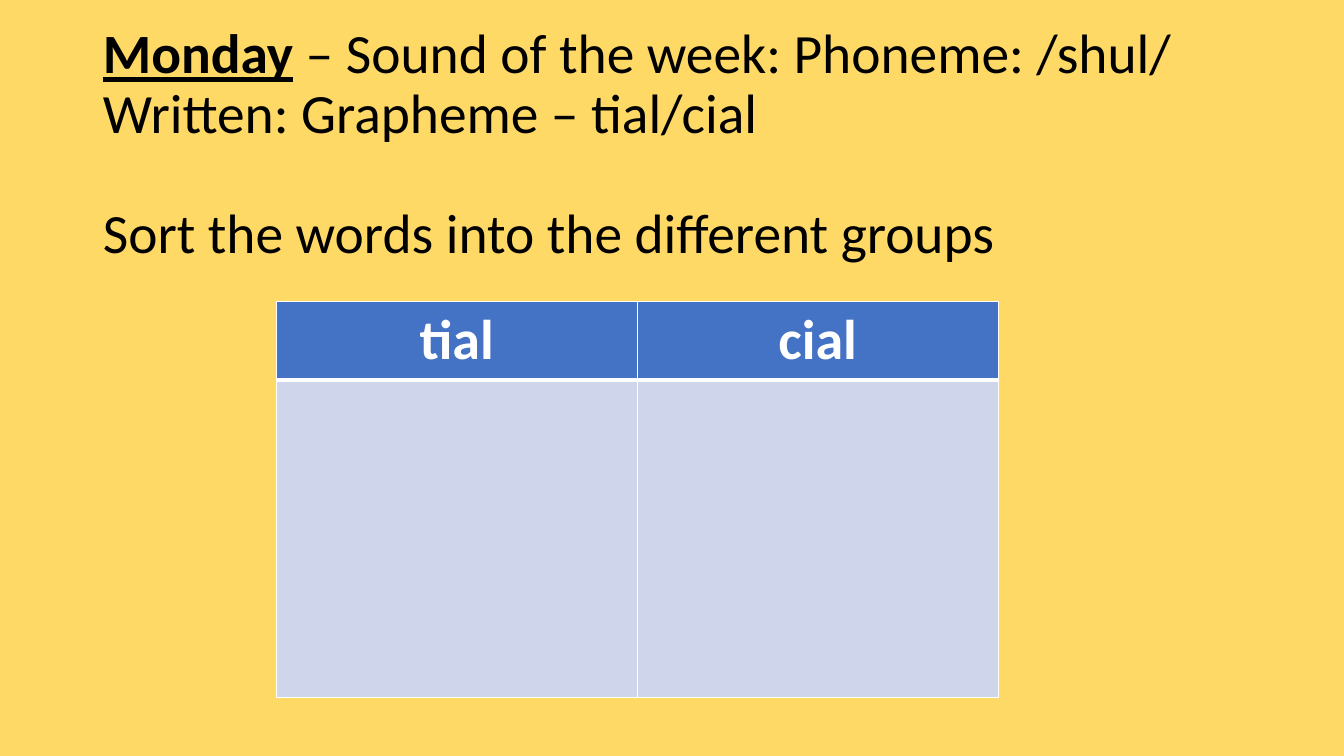
"""Builds a phonics slide with a heading and a two-column sorting table."""
from lxml import etree
from pptx import Presentation
from pptx.dml.color import RGBColor
from pptx.enum.text import MSO_ANCHOR, MSO_AUTO_SIZE, PP_ALIGN
from pptx.oxml.ns import qn
from pptx.util import Inches, Pt

MIDDLE = MSO_ANCHOR.MIDDLE
NO_FIT = MSO_AUTO_SIZE.NONE
LEFT, CENTER = PP_ALIGN.LEFT, PP_ALIGN.CENTER
YELLOW = RGBColor(0xFF, 0xD9, 0x66)
BLUE = RGBColor(0x44, 0x72, 0xC4)
PALE_BLUE = RGBColor(0xCF, 0xD5, 0xEA)
WHITE = RGBColor(0xFF, 0xFF, 0xFF)
BLACK = RGBColor(0x00, 0x00, 0x00)
TITLE_ONLY = 5


class SlideBuilder:
    """Holds the style and the current slide."""

    font = "Calibri"
    title_size = 39.6
    table_size = 40

    def __init__(self, prs, background):
        """Add a title-only slide with a plain background."""
        self.s = prs.slides.add_slide(prs.slide_layouts[TITLE_ONLY])
        fill = self.s.background.fill
        fill.solid()
        fill.fore_color.rgb = background

    def style(self, r, size, color, bold=False, underline=False):
        """Format one run."""
        r.font.name = self.font
        r.font.size = Pt(size)
        r.font.color.rgb = color
        r.font.bold = bold
        r.font.underline = underline

    def title(self, box, day, lines, task):
        """Fill the title with the day, the sound and the task."""
        sp = self.s.shapes.title
        sp.left, sp.top, sp.width, sp.height = map(Inches, box)
        tf = sp.text_frame
        tf.auto_size = NO_FIT
        tf.word_wrap = True
        tf.vertical_anchor = MIDDLE
        sound = tf.paragraphs[0]
        sound.text = day + "".join(lines[:0])
        self.style(sound.runs[0], self.title_size, BLACK, True, True)
        for i, line in enumerate(lines):
            if i:
                sound.add_line_break()
            r = sound.add_run()
            r.text = line
            self.style(r, self.title_size, BLACK)
        p = tf.add_paragraph()
        p.text = task
        p.space_before = Pt(43)
        self.style(p.runs[0], self.title_size, BLACK)
        for p in tf.paragraphs:
            p.alignment = LEFT
            p.line_spacing = 0.9

    def border(self, cell, side, width):
        """Draw one white cell border."""
        tc_pr = cell._tc.get_or_add_tcPr()
        ln = etree.SubElement(tc_pr, qn(f"a:{side}"), w=str(Pt(width)))
        fill = etree.SubElement(ln, qn("a:solidFill"))
        etree.SubElement(fill, qn("a:srgbClr"), val=str(WHITE))

    def cell(self, cell, text, color, top, bottom):
        """Format one table cell."""
        for side, width in (("lnL", 1), ("lnR", 1), ("lnT", top), ("lnB", bottom)):
            self.border(cell, side, width)
        cell.fill.solid()
        cell.fill.fore_color.rgb = color
        if text:
            p = cell.text_frame.paragraphs[0]
            p.text = text
            p.alignment = CENTER
            self.style(p.runs[0], self.table_size, WHITE, True)

    def sorting_table(self, left, top, col_width, row_heights, headings):
        """Add a heading row above one empty row."""
        box = (left, top, col_width * len(headings), sum(row_heights))
        table = self.s.shapes.add_table(
            len(row_heights), len(headings), *map(Inches, box)).table
        for row, height in zip(table.rows, row_heights):
            row.height = Inches(height)
        for i, heading in enumerate(headings):
            table.columns[i].width = Inches(col_width)
            self.cell(table.cell(0, i), heading, BLUE, 1, 3)
            self.cell(table.cell(1, i), "", PALE_BLUE, 3, 1)


def main():
    """Build and save the slide."""
    prs = Presentation()
    prs.slide_width, prs.slide_height = Inches(13.33), Inches(7.5)
    slide = SlideBuilder(prs, YELLOW)
    slide.title(
        (0.92, 0.72, 11.5, 1.45),
        "Monday",
        [" – Sound of the week: Phoneme: /shul/", "Written: Grapheme – tial/cial"],
        "Sort the words into the different groups",
    )
    slide.sorting_table(2.74, 2.99, 3.58, [0.77, 3.15], ["tial", "cial"])
    prs.save("out.pptx")


if __name__ == "__main__":
    main()
